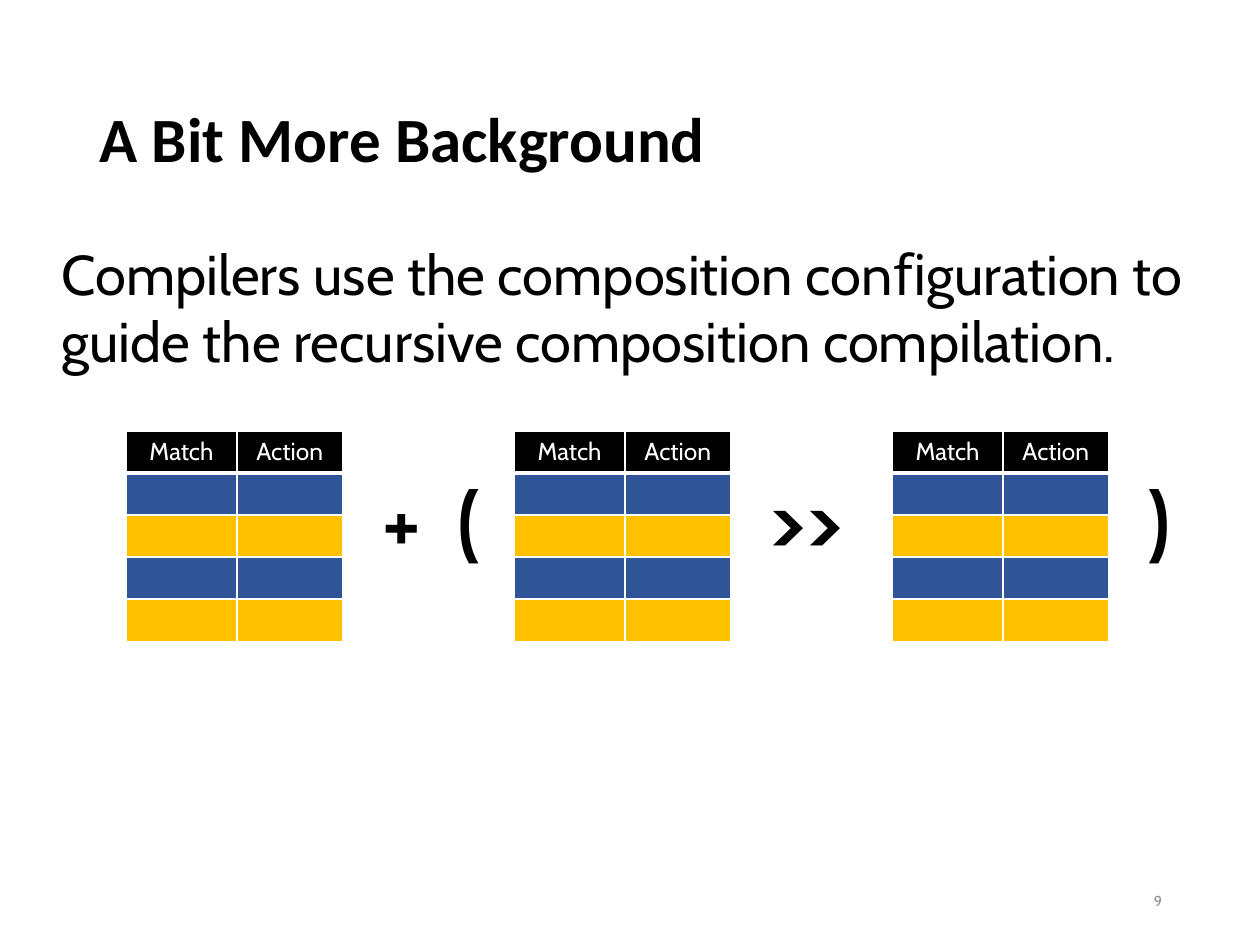
from lxml import etree
from pptx import Presentation
from pptx.dml.color import RGBColor
from pptx.enum.text import MSO_ANCHOR, MSO_AUTO_SIZE, PP_ALIGN
from pptx.oxml.ns import qn
from pptx.util import Inches, Pt

LEFT, CENTER, RIGHT = PP_ALIGN.LEFT, PP_ALIGN.CENTER, PP_ALIGN.RIGHT
TOP, MIDDLE = MSO_ANCHOR.TOP, MSO_ANCHOR.MIDDLE
NO_FIT = MSO_AUTO_SIZE.NONE
TITLE_ONLY = 5

# Content
TITLE = "A Bit More Background"
BODY = ("Compilers use the composition conﬁguration to guide "
        "the recursive composition compilation.")
PAGE = "9"
HEADERS = ("Match", "Action")
TABLE_LEFTS = (1, 4.08, 7.08)
OPERATORS = [("+", 2.94, 0.56), ("(", 3.53, 0.41),
             (">>", 6, 0.91), (")", 9.01, 0.41)]

# Layout
TABLE_TOP, TABLE_HEIGHT, COLUMNS = 3.42, 1.67, (0.88, 0.84)
OPERATOR_TOP, OPERATOR_HEIGHT = 3.67, 0.91

THEME = {
    "heading": "Calibri", "body": "Cabin",
    "ink": "000000", "white": "FFFFFF", "muted": "8C8C8C",
    "rows": ("2F5597", "FFC000", "2F5597", "FFC000"),
    "title": 36, "text": 32, "operator": 48, "cell": 14, "page": 8.2,
    "rule": 1, "header_rule": 3,
}


def write(tf, text, size, font=THEME["body"], color=THEME["ink"],
          bold=False, align=LEFT, spacing=None):
    p = tf.paragraphs[0]
    p.alignment = align
    if spacing:
        p.line_spacing = spacing
    r = p.add_run()
    r.text = text
    r.font.size, r.font.name, r.font.bold = Pt(size), font, bold
    r.font.color.rgb = RGBColor.from_string(color)


def add_text(slide, box, text, size, wrap=True, anchor=TOP, **fmt):
    tf = slide.shapes.add_textbox(*map(Inches, box)).text_frame
    tf.word_wrap, tf.vertical_anchor, tf.auto_size = wrap, anchor, NO_FIT
    write(tf, text, size, **fmt)


def style_cell(cell, fill, bottom):
    cell.margin_top = cell.margin_bottom = 0
    cell.vertical_anchor = MIDDLE
    # Borders come before the fill in the cell properties
    tc_pr = cell._tc.get_or_add_tcPr()
    for side in "LRTB":
        width = bottom if side == "B" else THEME["rule"]
        ln = etree.SubElement(tc_pr, qn(f"a:ln{side}"), w=str(Pt(width)))
        solid = etree.SubElement(ln, qn("a:solidFill"))
        etree.SubElement(solid, qn("a:srgbClr"), val=THEME["white"])
    cell.fill.solid()
    cell.fill.fore_color.rgb = RGBColor.from_string(fill)


def add_match_table(slide, left):
    fills = (THEME["ink"], *THEME["rows"])
    box = map(Inches, (left, TABLE_TOP, sum(COLUMNS), TABLE_HEIGHT))
    table = slide.shapes.add_table(len(fills), len(COLUMNS), *box).table
    for column, width in zip(table.columns, COLUMNS):
        column.width = Inches(width)
    for i, fill in enumerate(fills):
        table.rows[i].height = Inches(TABLE_HEIGHT / len(fills))
        for cell in table.rows[i].cells:
            style_cell(cell, fill, THEME["rule"] if i else THEME["header_rule"])
    for cell, header in zip(table.rows[0].cells, HEADERS):
        write(cell.text_frame, header, THEME["cell"],
              color=THEME["white"], align=CENTER)


def main():
    prs = Presentation()
    prs.slide_width, prs.slide_height = Inches(10), Inches(7.5)
    s = prs.slides.add_slide(prs.slide_layouts[TITLE_ONLY])

    # Title
    title = s.shapes.title
    title.left, title.top, title.width, title.height = map(
        Inches, (0.69, 0.4, 8.62, 1.45))
    title.text_frame.vertical_anchor = MIDDLE
    write(title.text_frame, TITLE, THEME["title"], font=THEME["heading"],
          bold=True, spacing=0.9)

    # Statement
    add_text(s, (0.39, 1.85, 9.7, 1.18), BODY, THEME["text"])

    # Composition of tables
    for left in TABLE_LEFTS:
        add_match_table(s, left)
    for symbol, left, width in OPERATORS:
        add_text(s, (left, OPERATOR_TOP, width, OPERATOR_HEIGHT), symbol,
                 THEME["operator"], wrap=False, bold=True)

    # Page number
    add_text(s, (7.07, 6.95, 2.25, 0.4), PAGE, THEME["page"], anchor=MIDDLE,
             color=THEME["muted"], align=RIGHT)

    prs.save("out.pptx")


if __name__ == "__main__":
    main()
